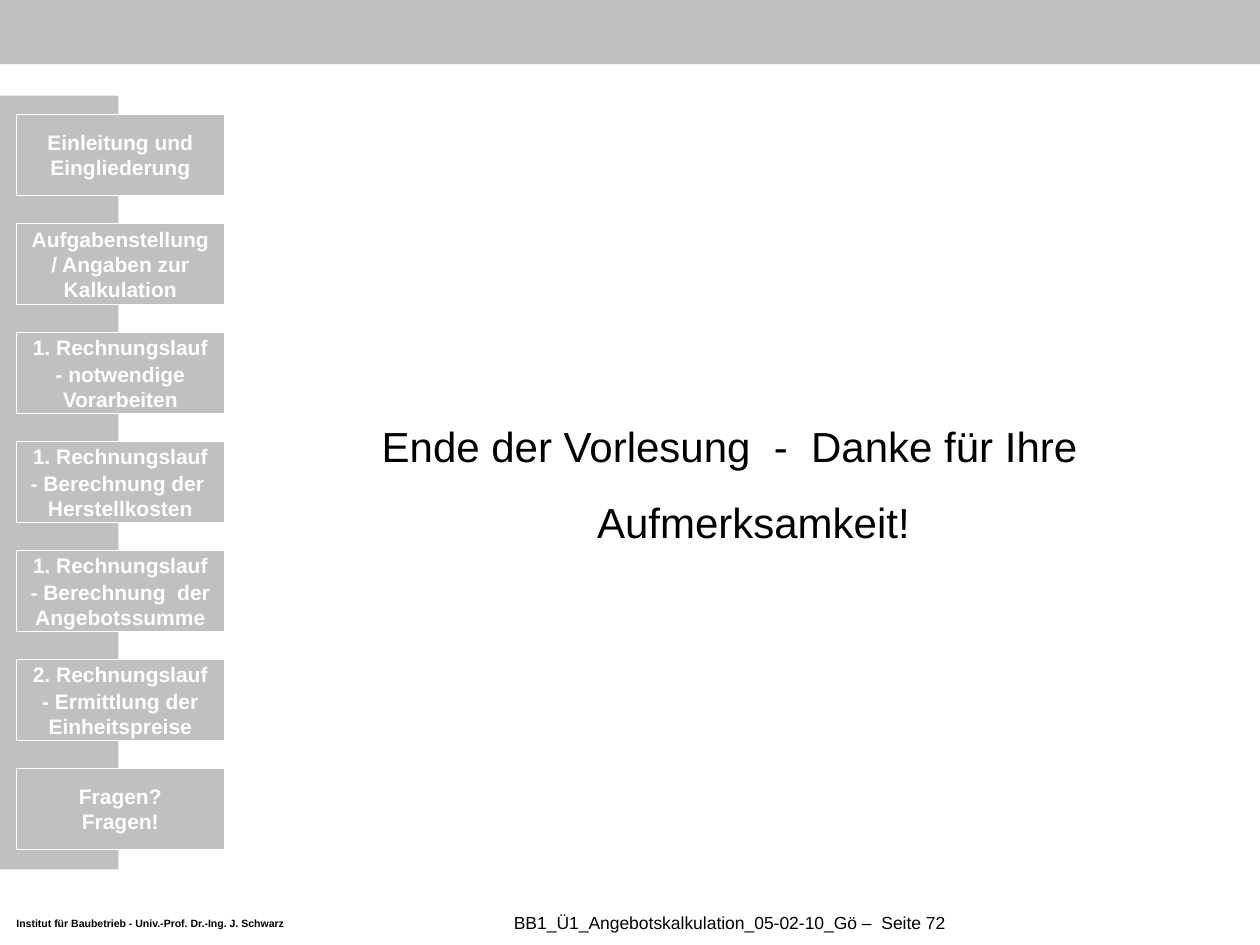
from pptx import Presentation
from pptx.dml.color import RGBColor
from pptx.enum.shapes import MSO_SHAPE
from pptx.enum.text import MSO_ANCHOR, MSO_AUTO_SIZE, PP_ALIGN
from pptx.util import Inches, Pt

BLACK = RGBColor(0x00, 0x00, 0x00)
WHITE = RGBColor(0xFF, 0xFF, 0xFF)
GRAY = RGBColor(0xC0, 0xC0, 0xC0)
TOP_GRAY = RGBColor(0xBF, 0xBF, 0xBF)

TOPICS = [
    "Einleitung und Eingliederung",
    "Aufgabenstellung / Angaben zur Kalkulation",
    "1. Rechnungslauf\n- notwendige Vorarbeiten",
    "1. Rechnungslauf\n- Berechnung der  Herstellkosten",
    "1. Rechnungslauf\n- Berechnung  der Angebotssumme",
    "2. Rechnungslauf\n- Ermittlung der Einheitspreise",
    "Fragen?\vFragen!",
]
FIRST_TOP = 0.91
STEP = 0.865


def style(par, size, color, bold=False, align=PP_ALIGN.CENTER):
    par.alignment = align
    font = par.font
    font.name = "Arial"
    font.size = Pt(size)
    font.bold = bold
    font.color.rgb = color


def add_box(slide, left, top, width, height, fill):
    box = slide.shapes.add_shape(
        MSO_SHAPE.RECTANGLE, Inches(left), Inches(top), Inches(width), Inches(height)
    )
    box.shadow.inherit = False
    box.fill.solid()
    box.fill.fore_color.rgb = fill
    box.line.fill.background()
    return box


def add_topic(slide, top, text):
    box = add_box(slide, 0.13, top, 1.65, 0.64, GRAY)
    box.line.color.rgb = WHITE
    box.line.width = Pt(0.75)
    frame = box.text_frame
    frame.word_wrap = True
    frame.vertical_anchor = MSO_ANCHOR.MIDDLE
    frame.text = text
    for i, par in enumerate(frame.paragraphs):
        style(par, 12, WHITE, bold=True)
        if i:
            par.space_before = Pt(1)


def add_label(slide, left, top, width, height, text, size, inset, wrap, bold, align):
    box = slide.shapes.add_textbox(
        Inches(left), Inches(top), Inches(width), Inches(height)
    )
    frame = box.text_frame
    frame.word_wrap = wrap
    frame.vertical_anchor = MSO_ANCHOR.MIDDLE
    frame.margin_left = frame.margin_right = Inches(inset)
    frame.margin_top = frame.margin_bottom = 0
    frame.text = text
    style(frame.paragraphs[0], size, BLACK, bold, align)


def set_title(slide, text):
    title = slide.shapes.title
    title.left, title.top = Inches(1.95), Inches(3.09)
    title.width, title.height = Inches(7.68), Inches(1.31)
    frame = title.text_frame
    frame.word_wrap = True
    frame.auto_size = MSO_AUTO_SIZE.NONE
    frame.vertical_anchor = MSO_ANCHOR.TOP
    frame.text = text
    par = frame.paragraphs[0]
    par.line_spacing = 1.5
    props = par._p.get_or_add_pPr()
    props.set("marL", str(Inches(0.38)))
    props.set("indent", str(Inches(-0.38)))
    style(par, 24, BLACK)


def main():
    deck = Presentation()
    deck.slide_width, deck.slide_height = Inches(10), Inches(7.5)
    slide = deck.slides.add_slide(deck.slide_layouts[5])
    add_box(slide, 0, 0, 10, 0.51, TOP_GRAY)
    add_box(slide, 0, 0.76, 0.94, 6.14, GRAY)
    add_label(
        slide, 0.13, 7.28, 2.15, 0.1,
        "Institut für Baubetrieb - Univ.-Prof. Dr.-Ing. J. Schwarz",
        6, 0, False, True, PP_ALIGN.LEFT,
    )
    add_label(
        slide, 2.76, 7.17, 6.06, 0.31,
        "BB1_Ü1_Angebotskalkulation_05-02-10_Gö –  Seite 72",
        10, 0.1, True, False, PP_ALIGN.CENTER,
    )
    set_title(slide, "Ende der Vorlesung  -  Danke für Ihre Aufmerksamkeit!")
    for i, text in enumerate(TOPICS):
        add_topic(slide, FIRST_TOP + i * STEP, text)
    deck.save("out.pptx")


if __name__ == "__main__":
    main()
